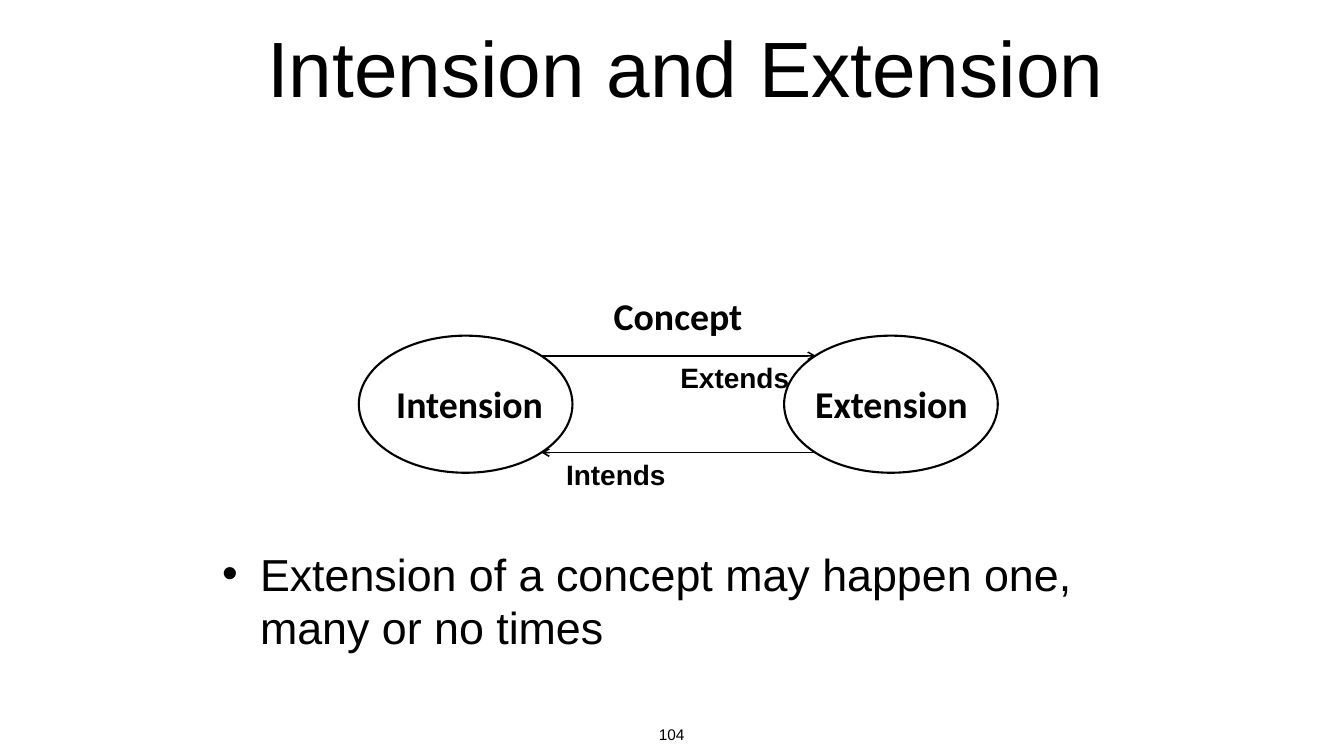
"""Build the slide on the intension and extension of a concept."""
from dataclasses import dataclass

from lxml.etree import SubElement
from pptx import Presentation
from pptx.dml.color import RGBColor
from pptx.enum.shapes import MSO_CONNECTOR, MSO_SHAPE
from pptx.enum.text import MSO_ANCHOR, MSO_AUTO_SIZE, PP_ALIGN
from pptx.oxml.ns import qn
from pptx.util import Inches, Pt


@dataclass(frozen=True)
class Theme:
    ink: RGBColor = RGBColor(0, 0, 0)
    paper: RGBColor = RGBColor(255, 255, 255)
    sans: str = "Arial"
    label: str = "Calibri"
    title: int = 112
    body: int = 64
    node: int = 54
    verb: int = 40
    page: int = 22
    rim: float = 3
    edge: float = 2.25


class Board:
    def __init__(self, slide, theme):
        self.slide = slide
        self.theme = theme

    def text(self, words, box, size, font=None, bold=False, pad=(0.08, 0.08),
             align=PP_ALIGN.CENTER, anchor=MSO_ANCHOR.TOP, wrap=True):
        shape = self.slide.shapes.add_textbox(*map(Inches, box))
        frame = shape.text_frame
        frame.word_wrap = wrap
        if not wrap:
            frame.auto_size = MSO_AUTO_SIZE.SHAPE_TO_FIT_TEXT
        frame.vertical_anchor = anchor
        frame.margin_left = frame.margin_right = Inches(pad[0])
        frame.margin_top = frame.margin_bottom = Inches(pad[1])
        para = frame.paragraphs[0]
        para.text = words
        para.alignment = align
        para.font.name = font or self.theme.sans
        para.font.size = Pt(size)
        para.font.bold = bold
        para.font.color.rgb = self.theme.ink
        return para

    def bullet(self, words, box):
        para = self.text(words, box, self.theme.body, align=PP_ALIGN.LEFT)
        para.space_before = Pt(0.2 * self.theme.body)
        props = para._p.get_or_add_pPr()
        props.set("marL", str(Inches(0.75)))
        props.set("indent", str(Inches(-0.75)))
        face = props.makeelement(qn("a:buFont"), {"typeface": self.theme.sans})
        mark = props.makeelement(qn("a:buChar"), {"char": "•"})
        props.find(qn("a:spcBef")).addnext(face)
        face.addnext(mark)

    def label(self, words, box):
        self.text(words, box, self.theme.node, self.theme.label, True, (0.15, 0.07))

    def verb(self, words, box):
        self.text(words, box, self.theme.verb, bold=True, pad=(0.1, 0.05), wrap=False)

    def oval(self, box):
        shape = self.slide.shapes.add_shape(MSO_SHAPE.OVAL, *map(Inches, box))
        shape.shadow.inherit = False
        shape.fill.solid()
        shape.fill.fore_color.rgb = self.theme.paper
        shape.line.color.rgb = self.theme.ink
        shape.line.width = Pt(self.theme.rim)

    def arrow(self, start, end, y):
        line = self.slide.shapes.add_connector(
            MSO_CONNECTOR.STRAIGHT, *map(Inches, (start, y, end, y)))
        line.line.color.rgb = self.theme.ink
        line.line.width = Pt(self.theme.edge)
        SubElement(line.line._get_or_add_ln(), qn("a:tailEnd"),
                   type="arrow", w="lg", len="lg")
        SubElement(line._element.spPr, qn("a:effectLst"))


def main():
    deck = Presentation()
    deck.slide_width, deck.slide_height = Inches(26.67), Inches(15)
    theme = Theme()
    board = Board(deck.slides.add_slide(deck.slide_layouts[6]), theme)

    board.text("Intension and Extension", (2.72, 0, 21.76, 2.61), theme.title,
               anchor=MSO_ANCHOR.MIDDLE)
    board.text("104", (12.93, 14.3, 0.8, 0.53), theme.page, wrap=False)

    for left in (7.12, 15.56):
        board.oval((left, 6.66, 4.24, 2.72))
    board.arrow(10.74, 16.19, 7.06)
    board.arrow(16.19, 10.74, 8.98)

    board.label("Concept", (11.68, 5.74, 3.55, 0.92))
    board.label("Intension", (7.45, 7.48, 3.74, 1.06))
    board.label("Extension", (15.78, 7.48, 3.82, 1.06))
    board.verb("Extends", (13.39, 7.11, 2.38, 0.77))
    board.verb("Intends", (11.12, 9.02, 2.2, 0.77))

    board.bullet("Extension of a concept may happen one, many or no times",
                 (4.33, 10.76, 18, 3.36))
    deck.save("out.pptx")


if __name__ == "__main__":
    main()
